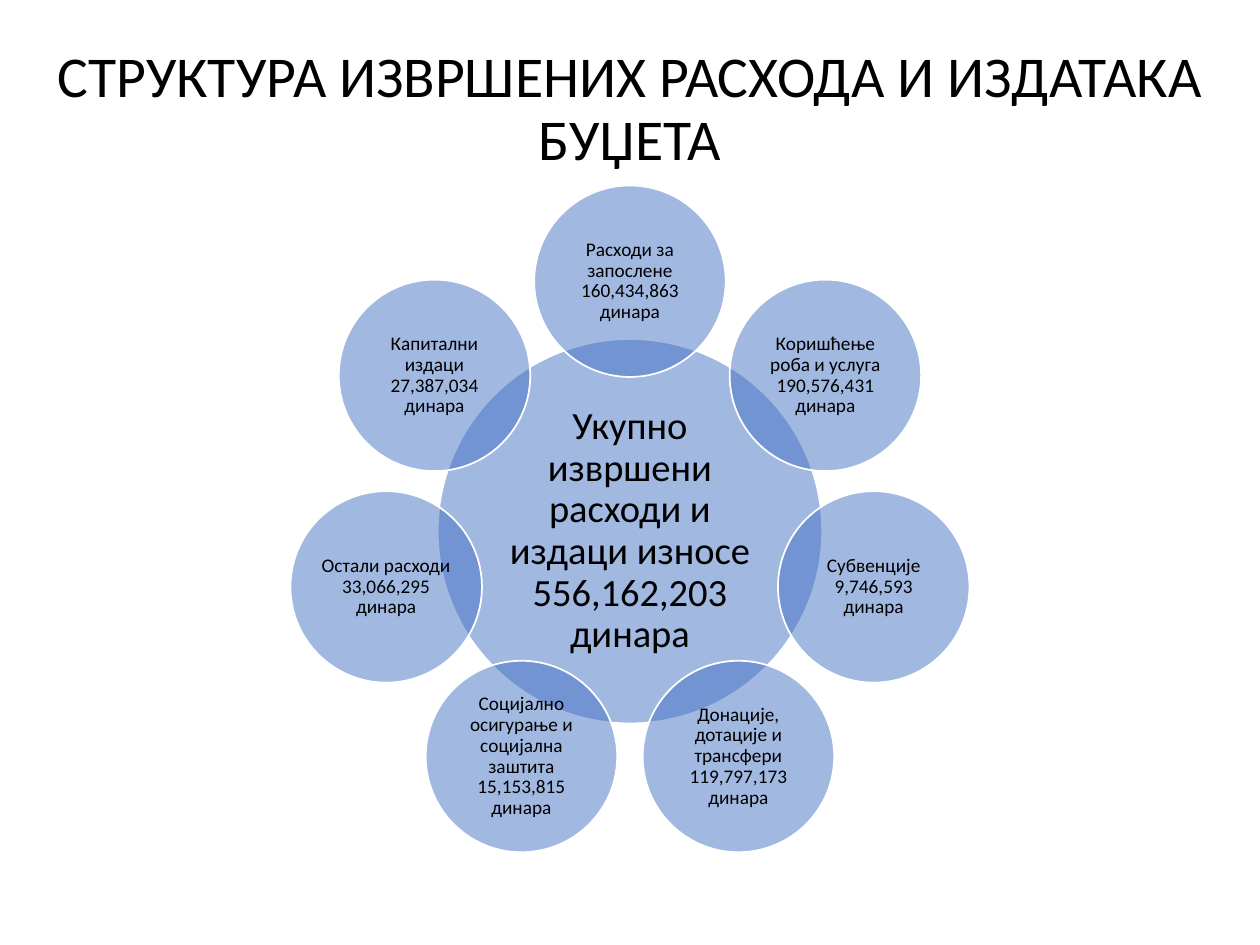
"""Build a slide showing the total budget spending ringed by its seven parts."""
from math import cos, pi, sin

from lxml import etree
from pptx import Presentation
from pptx.dml.color import RGBColor
from pptx.enum.shapes import MSO_SHAPE
from pptx.enum.text import MSO_ANCHOR, PP_ALIGN
from pptx.oxml.ns import qn
from pptx.util import Cm, Pt

ELLIPSE = MSO_SHAPE.OVAL
CENTER = PP_ALIGN.CENTER
MIDDLE = MSO_ANCHOR.MIDDLE
BOTTOM = MSO_ANCHOR.BOTTOM

FONT = "Calibri"
BLACK, WHITE, BLUE = "000000", "FFFFFF", "4472C4"
HUB_X, HUB_Y = 12.7, 10.71
HUB_DIAMETER, PART_DIAMETER, RING_RADIUS = 7.75, 3.86, 5.04

TITLE = "СТРУКТУРА ИЗВРШЕНИХ РАСХОДА И ИЗДАТАКА БУЏЕТА"
TOTAL = "Укупно извршени расходи и издаци износе 556,162,203 динара"
PARTS = [
    "Расходи за запослене 160,434,863 динара",
    "Коришћење роба и услуга 190,576,431 динара",
    "Субвенције 9,746,593 динара",
    "Донације, дотације и трансфери 119,797,173 динара",
    "Социјално осигурање и социјална заштита 15,153,815 динара",
    "Остали расходи 33,066,295 динара",
    "Капитални издаци 27,387,034 динара",
]


def color(hex_code):
    """Return the colour for a hex string."""
    return RGBColor.from_string(hex_code)


def write(frame, text, size, anchor=MIDDLE, inset_x=0.05, inset_y=0.05):
    """Write one centred paragraph into a text frame."""
    frame.word_wrap = True
    frame.vertical_anchor = anchor
    frame.margin_left = frame.margin_right = Cm(inset_x)
    frame.margin_top = frame.margin_bottom = Cm(inset_y)
    paragraph = frame.paragraphs[0]
    paragraph.alignment = CENTER
    paragraph.line_spacing = 0.9
    run = paragraph.add_run()
    run.text = text
    run.font.name = FONT
    run.font.size = Pt(size)
    run.font.color.rgb = color(BLACK)


def add_title(slide, text):
    """Add the slide title."""
    title = slide.shapes.add_textbox(Cm(0.76), Cm(0.64), Cm(23.88), Cm(2.97))
    write(title.text_frame, text, 33, anchor=BOTTOM, inset_x=0.25, inset_y=0.13)


def add_circle(shapes, center_x, center_y, diameter, text, size, inset=0.05):
    """Add a half-transparent labelled circle around a centre point."""
    circle = shapes.add_shape(
        ELLIPSE,
        Cm(center_x - diameter / 2),
        Cm(center_y - diameter / 2),
        Cm(diameter),
        Cm(diameter),
    )
    circle.shadow.inherit = False
    circle.fill.solid()
    circle.fill.fore_color.rgb = color(BLUE)
    fill_color = circle.element.spPr.find(qn("a:solidFill")).find(qn("a:srgbClr"))
    etree.SubElement(fill_color, qn("a:alpha"), val="50000")
    circle.line.color.rgb = color(WHITE)
    circle.line.width = Pt(1)
    write(circle.text_frame, text, size, inset_x=inset, inset_y=inset)


def add_radial_diagram(slide, total, parts):
    """Add the total as a hub with its parts spaced evenly around it."""
    shapes = slide.shapes.add_group_shape().shapes
    add_circle(shapes, HUB_X, HUB_Y, HUB_DIAMETER, total, 22, inset=0.08)
    for index, part in enumerate(parts):
        angle = 2 * pi * index / len(parts)
        part_x = HUB_X + RING_RADIUS * sin(angle)
        part_y = HUB_Y - RING_RADIUS * cos(angle)
        add_circle(shapes, part_x, part_y, PART_DIAMETER, part, 11)


def main():
    """Build and save the presentation."""
    presentation = Presentation()
    presentation.slide_width = Cm(25.4)
    presentation.slide_height = Cm(19.05)
    slide = presentation.slides.add_slide(presentation.slide_layouts[6])
    add_title(slide, TITLE)
    add_radial_diagram(slide, TOTAL, PARTS)
    presentation.save("out.pptx")


if __name__ == "__main__":
    main()
